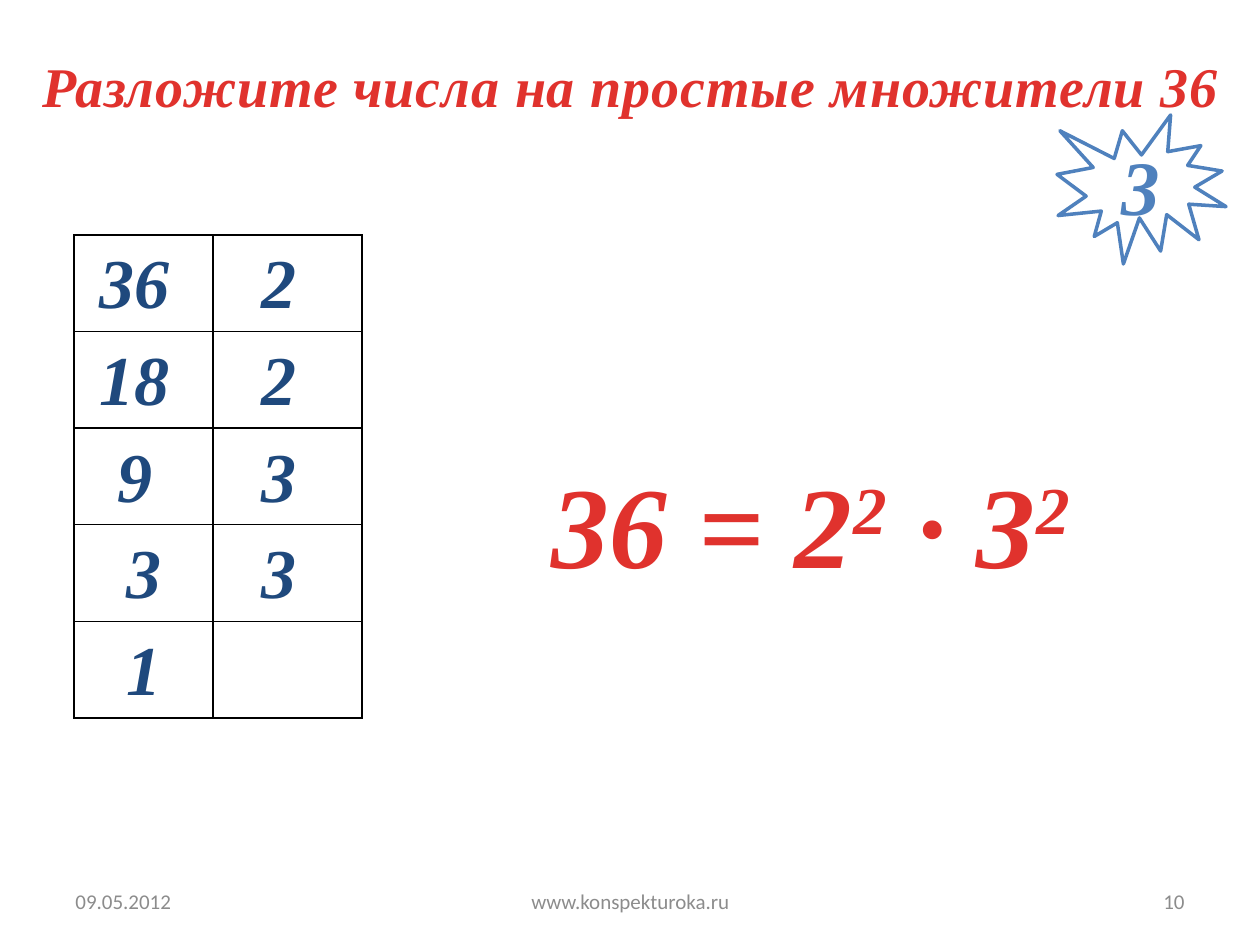
"""Build a slide that factors 36 into primes."""
from lxml.etree import SubElement
from pptx import Presentation
from pptx.dml.color import RGBColor
from pptx.enum.shapes import MSO_SHAPE
from pptx.enum.text import MSO_ANCHOR, MSO_AUTO_SIZE, PP_ALIGN
from pptx.oxml import parse_xml
from pptx.oxml.ns import nsdecls, qn
from pptx.util import Pt

PX = 914400 / 126
RED = RGBColor(0xE0, 0x32, 0x2D)
NAVY = RGBColor(0x1F, 0x49, 0x7D)
BLUE = RGBColor(0x4F, 0x81, 0xBD)
GRAY = RGBColor(0x8C, 0x8C, 0x8C)
WHITE = RGBColor(0xFF, 0xFF, 0xFF)


def box(*lengths):
    return [round(n * PX) for n in lengths]


def style(r, size, color, name="Times New Roman", bold=True):
    r.font.name = name
    r.font.size = Pt(size)
    r.font.bold = r.font.italic = bold
    r.font.color.rgb = color


prs = Presentation()
prs.slide_width, prs.slide_height = box(1260, 945)
s = prs.slides.add_slide(prs.slide_layouts[5])

footers = [
    ("09.05.2012", 63, 294, PP_ALIGN.LEFT),
    ("www.konspekturoka.ru", 431, 399, PP_ALIGN.CENTER),
    ("10", 903, 294, PP_ALIGN.RIGHT),
]
for text, left, width, align in footers:
    tf = s.shapes.add_textbox(*box(left, 876, width, 50)).text_frame
    tf.word_wrap = True
    tf.vertical_anchor = MSO_ANCHOR.MIDDLE
    p = tf.paragraphs[0]
    p.text = text
    p.alignment = align
    style(p.runs[0], 12, GRAY, "Calibri", False)

title = s.shapes.title
title.left, title.top, title.width, title.height = box(18, 45, 1226, 81)
tf = title.text_frame
tf.text = "Разложите числа на простые множители 36"
tf.auto_size = MSO_AUTO_SIZE.NONE
tf.vertical_anchor = MSO_ANCHOR.TOP
p = tf.paragraphs[0]
p.alignment = PP_ALIGN.CENTER
style(p.runs[0], 32, RED)
p.runs[0].font._element.set("spc", "50")

tf = s.shapes.add_textbox(*box(539, 447, 590, 152)).text_frame
tf.word_wrap = False
p = tf.paragraphs[0]
for text, baseline in [("36 = 2", 0), ("2", 30000), (" ∙ З", 0), ("2", 30000)]:
    r = p.add_run()
    r.text = text
    style(r, 66, RED)
    r.font._element.set("spc", "50")
    r.font._element.set("baseline", str(baseline))

rows = [("36 ", "2 "), ("18 ", "2 "), ("9 ", "3 "), ("3", "3 "), ("1", "")]
table = s.shapes.add_table(len(rows), 2, *box(74, 235, 288, 483)).table
table.first_row = table.horz_banding = False
table.columns[0].width, table.columns[1].width = box(139, 149)
for i, row in enumerate(rows):
    for j, text in enumerate(row):
        cell = table.cell(i, j)
        cell.margin_left, cell.margin_right = box(4, 4)
        cell.margin_top = cell.margin_bottom = 0
        tcPr = cell._tc.get_or_add_tcPr()
        for side in "LRTB":
            ln = SubElement(tcPr, qn(f"a:ln{side}"), w=str(Pt(1)))
            fill = SubElement(ln, qn("a:solidFill"))
            SubElement(fill, qn("a:srgbClr"), val="000000")
        cell.fill.background()
        p = cell.text_frame.paragraphs[0]
        p.text = text
        p.alignment = PP_ALIGN.CENTER
        p.line_spacing = 1.15
        for r in p.runs:
            style(r, 40, NAVY)

sp = s.shapes.add_shape(MSO_SHAPE.EXPLOSION1, *box(1057, 115, 169, 149))
sp.shadow.inherit = False
sp.fill.solid()
sp.fill.fore_color.rgb = WHITE
sp.line.color.rgb = BLUE
sp.line.width = Pt(2)
tf = sp.text_frame
tf.vertical_anchor = MSO_ANCHOR.MIDDLE
p = tf.paragraphs[0]
p.text = "3"
p.alignment = PP_ALIGN.CENTER
style(p.runs[0], 44, BLUE)

prs.save("out.pptx")
